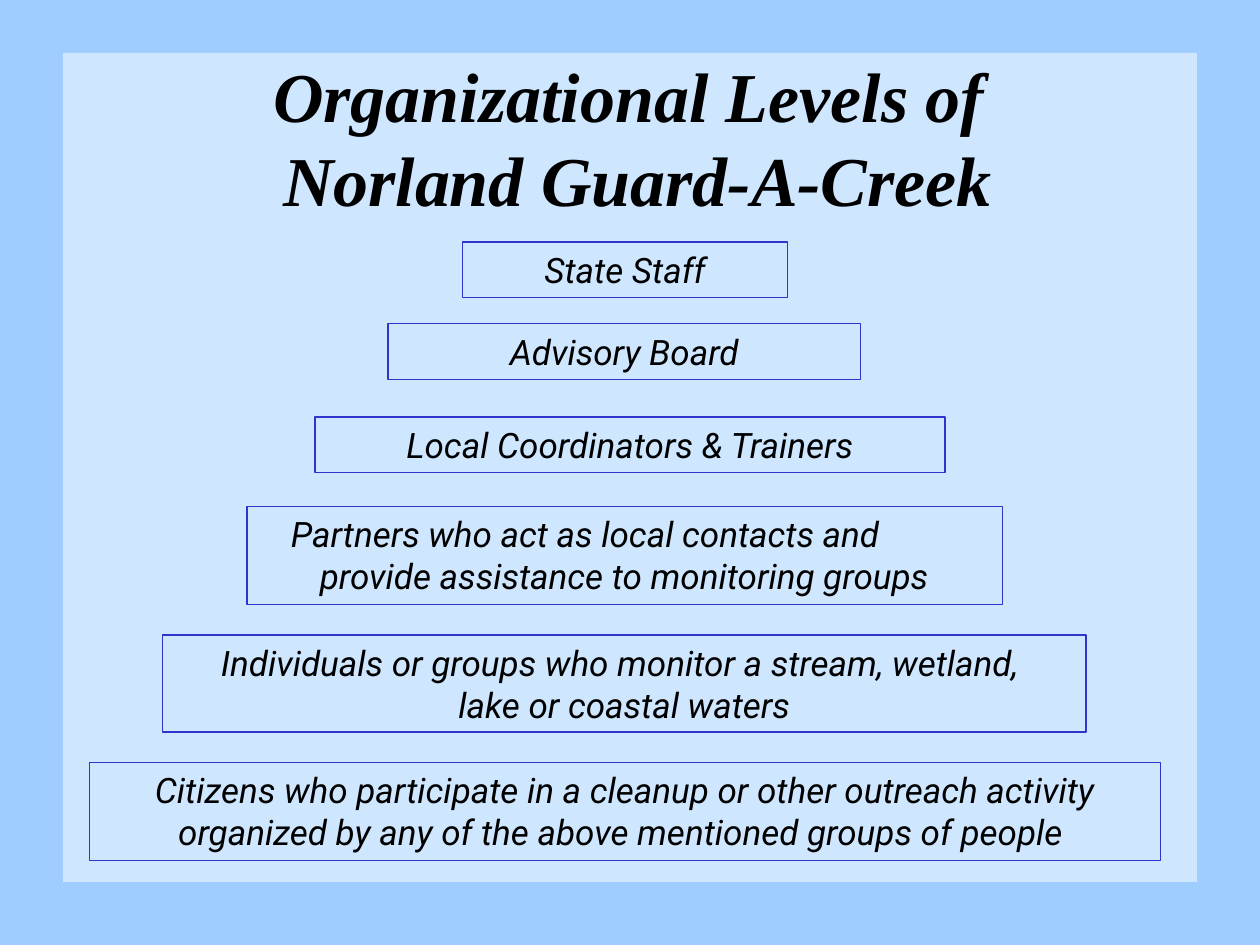
from lxml import etree
from pptx import Presentation
from pptx.dml.color import RGBColor
from pptx.enum.shapes import MSO_SHAPE
from pptx.enum.text import MSO_ANCHOR, MSO_AUTO_SIZE, PP_ALIGN
from pptx.oxml.ns import qn
from pptx.util import Inches, Pt

RECTANGLE = MSO_SHAPE.RECTANGLE
MIDDLE = MSO_ANCHOR.MIDDLE
TOP = MSO_ANCHOR.TOP
NO_FIT = MSO_AUTO_SIZE.NONE
GROW = MSO_AUTO_SIZE.SHAPE_TO_FIT_TEXT
CENTER = PP_ALIGN.CENTER
LEFT = PP_ALIGN.LEFT

SKY = RGBColor(0x9F, 0xCD, 0xFF)
WHITE = RGBColor(0xFF, 0xFF, 0xFF)
BLACK = RGBColor(0x00, 0x00, 0x00)
BLUE = RGBColor(0x33, 0x33, 0xCC)

TITLE_FONT = {"name": "Times New Roman", "size": Pt(40), "bold": True, "italic": True}
LEVEL_FONT = {"name": "Roboto", "size": Pt(20), "bold": False, "italic": True}

# Each level: left, top, width, height, paragraphs
LEVELS = [
    (3.67, 1.92, 2.58, 0.44, ["State Staff"]),
    (3.08, 2.57, 3.75, 0.44, ["Advisory Board"]),
    (2.5, 3.31, 5, 0.44, ["Local Coordinators & Trainers"]),
    (1.96, 4.02, 6, 0.78, ["Partners who act as local contacts and",
                           "provide assistance to monitoring groups"]),
    (1.29, 5.04, 7.33, 0.77, ["Individuals or groups who monitor a stream, wetland, ",
                              "lake or coastal waters"]),
    (0.71, 6.05, 8.5, 0.78, ["Citizens who participate in a cleanup or other outreach activity "
                             "organized by any of the above mentioned groups of people "]),
]
PARTNERS = 3
PARTNER_INDENTS = (0.25, 0.48)


def format_font(font, values):
    for name, value in values.items():
        setattr(font, name, value)
    font.color.rgb = BLACK


def add_panel(page):
    """Half-transparent white panel behind the content."""
    panel = page.shapes.add_shape(RECTANGLE, Inches(0.5), Inches(0.42), Inches(9), Inches(6.58))
    panel.shadow.inherit = False
    panel.fill.solid()
    panel.fill.fore_color.rgb = WHITE
    panel.line.fill.background()
    color = panel.fill._xPr.find(qn("a:solidFill"))[0]
    etree.SubElement(color, qn("a:alpha"), val="50000")
    # Place the panel behind the title
    page.shapes._spTree.insert(2, panel._element)


def set_title(page):
    title = page.shapes.title
    title.left, title.top = Inches(1.27), Inches(0.5)
    title.width, title.height = Inches(7.58), Inches(1.17)
    frame = title.text_frame
    frame.auto_size = NO_FIT
    frame.vertical_anchor = MIDDLE
    frame.text = "Organizational Levels of \vNorland Guard-A-Creek"
    para = frame.paragraphs[0]
    para.alignment = CENTER
    para.line_spacing = Pt(48)
    for span in para.runs:
        format_font(span.font, TITLE_FONT)


def add_level(page, left, top, width, height, lines):
    """Outlined box with centred text."""
    box = page.shapes.add_shape(RECTANGLE, Inches(left), Inches(top), Inches(width), Inches(height))
    box.shadow.inherit = False
    box.fill.background()
    box.line.color.rgb = BLUE
    box.line.width = Pt(0.75)
    frame = box.text_frame
    frame.word_wrap = True
    frame.auto_size = GROW
    frame.vertical_anchor = TOP
    frame.text = "\n".join(lines)
    for para in frame.paragraphs:
        para.alignment = CENTER
        format_font(para.runs[0].font, LEVEL_FONT)
    return box


def stagger_lines(box, indents):
    """Left-align the paragraphs, each with its own indent."""
    for para, indent in zip(box.text_frame.paragraphs, indents):
        para.alignment = LEFT
        para._p.get_or_add_pPr().set("marL", str(Inches(indent)))


def main():
    deck = Presentation()
    deck.slide_width, deck.slide_height = Inches(10), Inches(7.5)
    page = deck.slides.add_slide(deck.slide_layouts[5])
    page.background.fill.solid()
    page.background.fill.fore_color.rgb = SKY

    add_panel(page)
    set_title(page)
    boxes = [add_level(page, *level) for level in LEVELS]
    stagger_lines(boxes[PARTNERS], PARTNER_INDENTS)
    deck.save("out.pptx")


if __name__ == "__main__":
    main()
